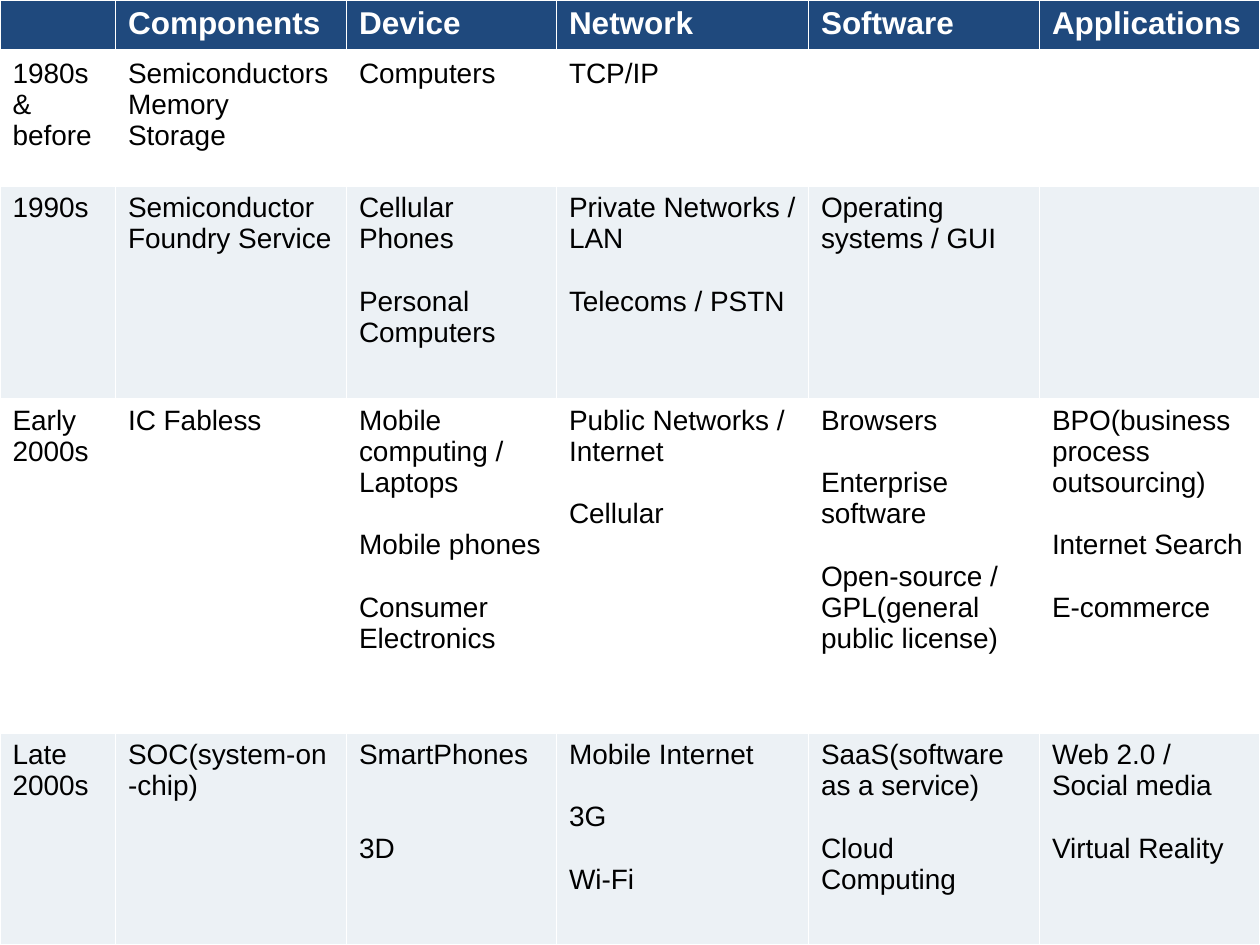
"""Build a slide with a table of technology layers by decade."""
from pptx import Presentation
from pptx.dml.color import RGBColor
from pptx.oxml.ns import qn
from pptx.util import Pt
from lxml import etree

COLORS = {"header": "1F497D", "white": "FFFFFF", "band": "ECF1F5", "text": "000000"}
HEADER_FONT = {"name": "Arial", "size": Pt(18), "bold": True}
BODY_FONT = {"name": "Arial", "size": Pt(16), "bold": False}
LINE_PITCH = 17.8
COL_WIDTHS = [66, 132, 120, 144, 132, 126]
ROW_HEIGHTS = [29.5, 77, 121.5, 191, 121]
ROWS = [
    ["", "Components", "Device", "Network", "Software", "Applications"],
    ["1980s & before", "Semiconductors\nMemory\nStorage", "Computers", "TCP/IP", "", ""],
    ["1990s", "Semiconductor Foundry Service", "Cellular Phones\n\nPersonal Computers",
     "Private Networks / LAN\n\nTelecoms / PSTN", "Operating systems / GUI", ""],
    ["Early 2000s", "IC Fabless",
     "Mobile computing / Laptops\n\nMobile phones\n\nConsumer Electronics",
     "Public Networks / Internet\n\nCellular",
     "Browsers\n\nEnterprise software\n\nOpen-source / GPL(general public license)",
     "BPO(business process outsourcing)\n\nInternet Search\n\nE-commerce"],
    ["Late 2000s", "SOC(system-on\n-chip)", "SmartPhones\n\n\n3D",
     "Mobile Internet\n\n3G\n\nWi-Fi", "SaaS(software as a service)\n\nCloud Computing",
     "Web 2.0 / Social media\n\nVirtual Reality"],
]


def rgb(key):
    """Return the named colour."""
    return RGBColor.from_string(COLORS[key])


def set_borders(cell, top, bottom):
    """Draw white borders, with the given top and bottom widths in points."""
    tcPr = cell._tc.get_or_add_tcPr()
    for side, width in {"L": 1, "R": 1, "T": top, "B": bottom}.items():
        ln = etree.SubElement(tcPr, qn(f"a:ln{side}"), w=str(Pt(width)))
        fill = etree.SubElement(ln, qn("a:solidFill"))
        etree.SubElement(fill, qn("a:srgbClr"), val=COLORS["white"])


def write_text(cell, text, font, color):
    """Write one paragraph per line, turning each empty line into space before."""
    tf = cell.text_frame
    p, gap = tf.paragraphs[0], 0
    for i, line in enumerate(text.split("\n")):
        if not line:
            gap += 1
            continue
        if i:
            p = tf.add_paragraph()
        p.space_before = Pt(gap * LINE_PITCH)
        gap = 0
        r = p.add_run()
        r.text = line
        for name, value in font.items():
            setattr(r.font, name, value)
        r.font.color.rgb = rgb(color)


def style_cell(cell, row, text):
    """Give a cell its borders, fill and text according to its row."""
    set_borders(cell, 3 if row == 1 else 1, 3 if row == 0 else 1)
    fill = "header" if row == 0 else "white" if row % 2 else "band"
    cell.fill.solid()
    cell.fill.fore_color.rgb = rgb(fill)
    if row == 0:
        write_text(cell, text, HEADER_FONT, "white")
    else:
        write_text(cell, text, BODY_FONT, "text")


def add_timeline_table(s):
    """Add the table that fills the slide."""
    table = s.shapes.add_table(len(ROWS), len(COL_WIDTHS), Pt(0), Pt(0),
                               Pt(sum(COL_WIDTHS)), Pt(sum(ROW_HEIGHTS))).table
    table.horz_banding = False
    for column, width in zip(table.columns, COL_WIDTHS):
        column.width = Pt(width)
    for i, (height, texts) in enumerate(zip(ROW_HEIGHTS, ROWS)):
        table.rows[i].height = Pt(height)
        for j, text in enumerate(texts):
            style_cell(table.cell(i, j), i, text)


def main():
    """Create and save the presentation."""
    prs = Presentation()
    prs.slide_width, prs.slide_height = Pt(720), Pt(540)
    s = prs.slides.add_slide(prs.slide_layouts[6])
    add_timeline_table(s)
    prs.save("out.pptx")


if __name__ == "__main__":
    main()
